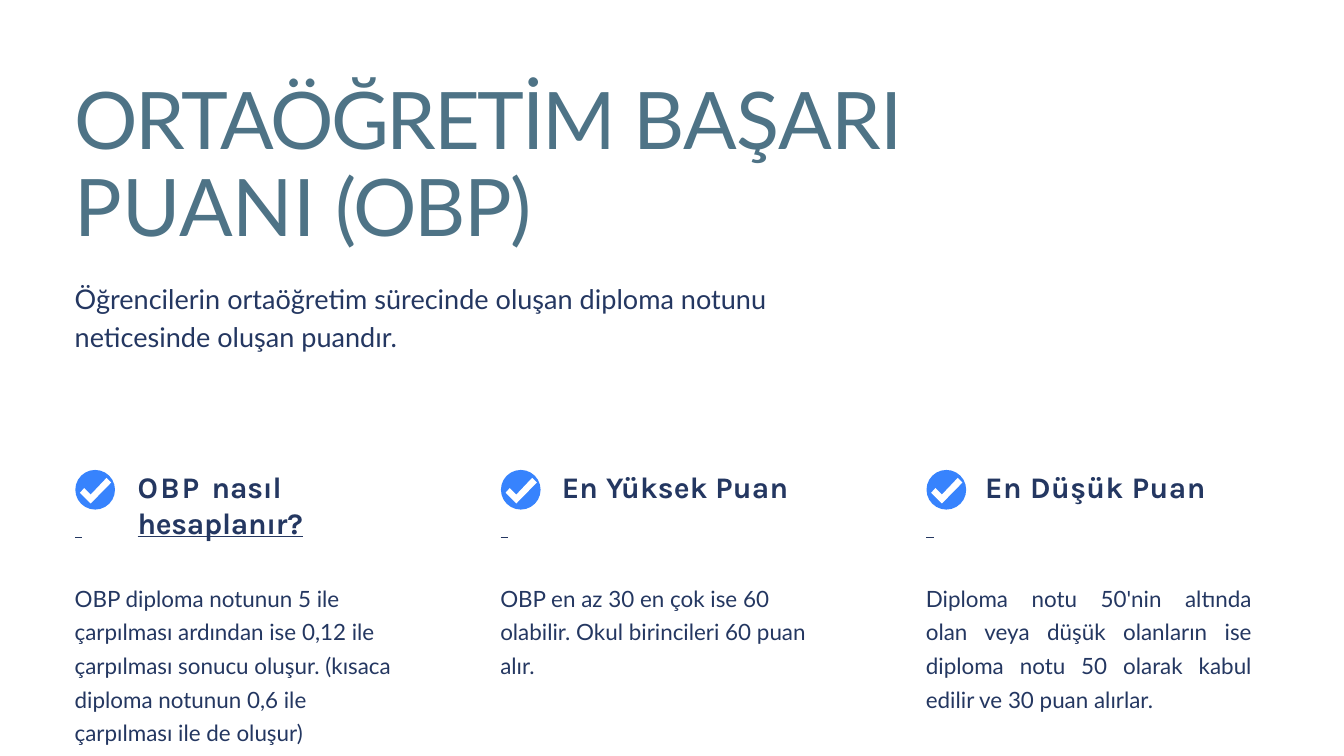
"""Build the slide on the secondary school achievement score."""
from lxml.etree import SubElement
from pptx import Presentation
from pptx.dml.color import RGBColor as RGB
from pptx.enum.shapes import MSO_SHAPE as Shape
from pptx.enum.text import PP_ALIGN as Align
from pptx.oxml.ns import qn
from pptx.util import Pt

TEAL = RGB(0x4E, 0x73, 0x86)
NAVY = RGB(0x24, 0x37, 0x61)
BLUE = RGB(0x37, 0x83, 0xFD)
WHITE = RGB(0xFF, 0xFF, 0xFF)

TITLE = [("ORTAÖĞRETİM ", -2.5), ("BAŞARI ", -0.5), ("PUANI ", -0.1), ("(OBP)", -1.9)]
INTRO = "Öğrencilerin ortaöğretim sürecinde oluşan diploma notunu neticesinde oluşan puandır."
COLS = [
    {"head": [("OBP ", 2.5), ("nasıl", -0.2)], "tail": "hesaplanır?",
     "body": "OBP diploma notunun 5 ile çarpılması ardından ise 0,12 ile çarpılması "
             "sonucu oluşur. (kısaca diploma notunun 0,6 ile çarpılması ile de oluşur)",
     "indent": 67, "width": 350, "align": Align.LEFT},
    {"head": [("En Yüksek Puan", 0.2)], "tail": "",
     "body": "OBP en az 30 en çok ise 60 olabilir. Okul birincileri 60 puan alır.",
     "indent": 65.5, "width": 331, "align": Align.LEFT},
    {"head": [("En Düşük Puan", 0.5)], "tail": "",
     "body": "Diploma notu 50'nin altında\volan veya düşük olanların ise diploma notu "
             "50 olarak kabul edilir ve 30 puan alırlar.",
     "indent": 63, "width": 349, "align": Align.JUSTIFY},
]
LEFT, STEP = 80, 456
HEAD, MARK, BODY = 501, 503.5, 618.5
DISC = 42.5
TICK = [(16.5, 36), (5, 24.5), (9.5, 19.5), (16.5, 26.5), (33.5, 8.5), (38.5, 13.5)]


def add_box(slide, x, y, w, h, top=1):
    frame = slide.shapes.add_textbox(Pt(x), Pt(y), Pt(w), Pt(h)).text_frame
    frame.word_wrap = True
    frame.margin_left = frame.margin_right = frame.margin_bottom = 0
    frame.margin_top = Pt(top)
    return frame


def style(para, name, size, color, line, before=0, bold=False):
    font = para.font
    font.name, font.size, font.bold = name, Pt(size), bold
    font.color.rgb = color
    para.line_spacing, para.space_before = line, Pt(before)


def add_runs(para, runs):
    for text, gap in runs:
        run = para.add_run()
        run.text = text
        run.font._element.set("spc", str(round(gap * 100)))


def paint(shape, color):
    shape.shadow.inherit = False
    shape.fill.solid()
    shape.fill.fore_color.rgb = color
    shape.line.fill.background()


def add_mark(slide, x, y):
    paint(slide.shapes.add_shape(Shape.OVAL, Pt(x), Pt(y), Pt(DISC), Pt(DISC)), BLUE)
    pts = [(Pt(x + dx), Pt(y + dy)) for dx, dy in TICK]
    path = slide.shapes.build_freeform(*pts[0])
    path.add_line_segments(pts[1:], close=True)
    paint(path.convert_to_shape(), WHITE)


def add_head(slide, x, col):
    frame = add_box(slide, x, HEAD, 373, 78.5)
    para = frame.paragraphs[0]
    style(para, "Karla", 32, NAVY, Pt(38.3), 1, True)
    props = para._p.get_or_add_pPr()
    props.set("marL", str(Pt(col["indent"])))
    props.set("indent", "0")
    add_runs(para, col["head"])

    para = frame.add_paragraph()
    style(para, "Karla", 32, NAVY, Pt(38.4), 0, True)
    para.font.underline = True
    props = para._p.get_or_add_pPr()
    tabs = SubElement(props, qn("a:tabLst"))
    props.insert(props.index(props.find(qn("a:defRPr"))), tabs)
    stop = col["indent"] if col["tail"] else 370
    SubElement(tabs, qn("a:tab"), pos=str(Pt(stop)), algn="l")
    dash = para.add_run()
    dash.text = " \t"
    dash.font.name, dash.font.bold = "Times New Roman", False
    if col["tail"]:
        add_runs(para, [(col["tail"], -0.3)])


def add_col(slide, x, col):
    add_mark(slide, x + 0.7, MARK)
    add_head(slide, x + 0.4, col)
    para = add_box(slide, x, BODY, col["width"], 146).paragraphs[0]
    para.text = col["body"]
    para.alignment = col["align"]
    style(para, "Lato", 24, NAVY, 1.25, 1)


def main():
    deck = Presentation()
    deck.slide_width, deck.slide_height = Pt(1440), Pt(810)
    slide = deck.slides.add_slide(deck.slide_layouts[6])

    para = add_box(slide, LEFT, 73.5, 937, 197, 10.8).paragraphs[0]
    add_runs(para, TITLE)
    style(para, "Lato", 85, TEAL, Pt(93), 11)

    para = add_box(slide, LEFT, 296, 752, 83).paragraphs[0]
    para.text = INTRO
    style(para, "Lato", 29, NAVY, 1.16, 1)

    for i, col in enumerate(COLS):
        add_col(slide, LEFT + i * STEP, col)
    deck.save("out.pptx")


if __name__ == "__main__":
    main()
